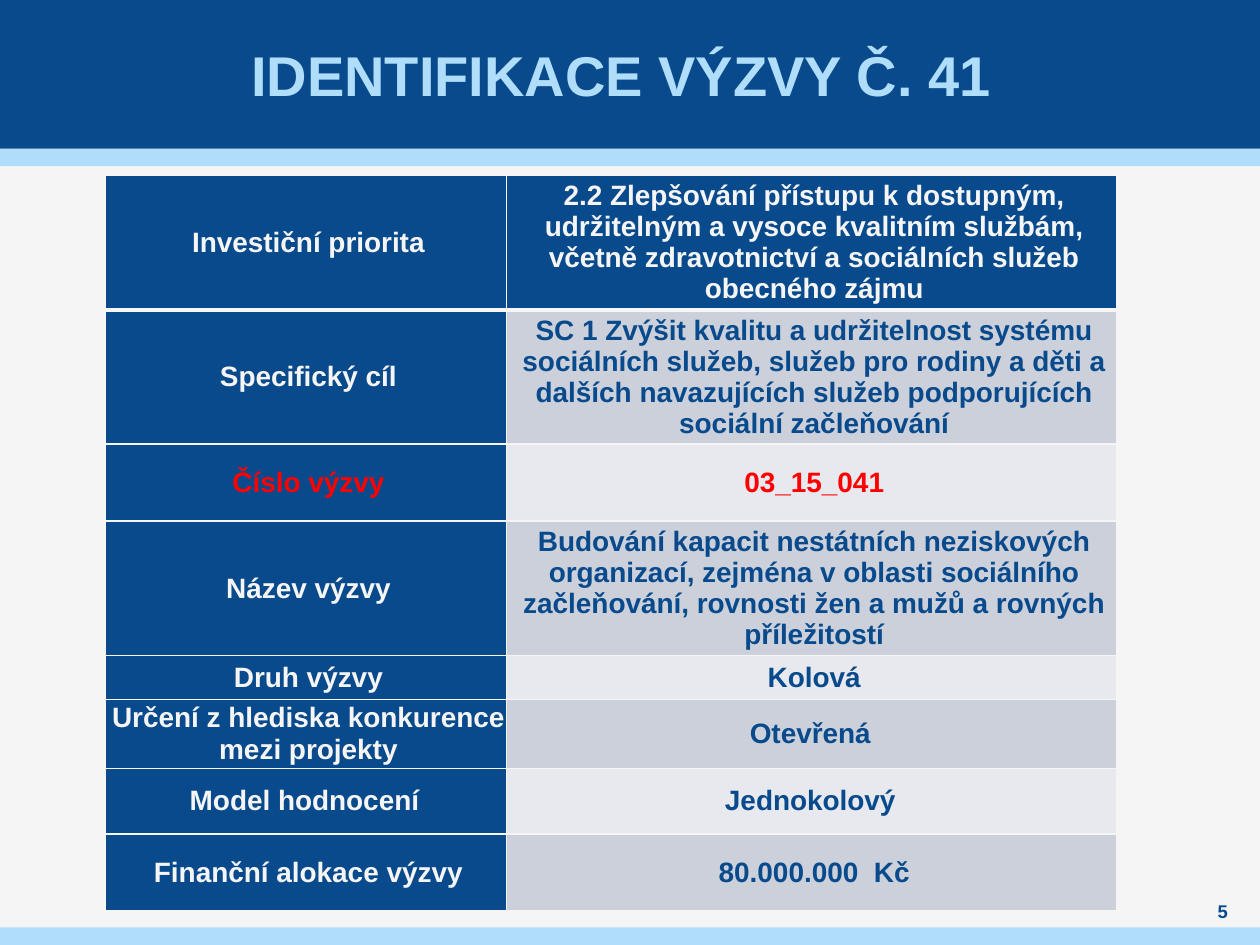
from dataclasses import dataclass

import pptx
import pptx.dml.color
import pptx.enum.shapes
import pptx.enum.text
import pptx.oxml
import pptx.oxml.ns
import pptx.util
from pptx.util import Pt

NAVY, SKY, PALE, RED = "084A8B", "AFDDFA", "F5F5F5", "FF0000"
BANDS = ("E7E9EE", "CCD0DA")
FONT = "Arial"


@dataclass
class Bar:
    top: float
    height: float
    fill: str


@dataclass
class Label:
    text: str
    left: float
    top: float
    width: float
    height: float
    size: float
    color: str
    side_inset: float = 0


@dataclass
class Row:
    name: str
    value: str
    height: float
    highlighted: bool = False


BARS = [Bar(85, 10, SKY), Bar(0, 85, NAVY), Bar(530, 10, SKY)]
LABELS = [
    Label("IDENTIFIKACE VÝZVY Č. 41 ", 28, 0, 663, 85, 32, SKY, 3),
    Label("5", 680.5, 513.5, 36.5, 14.5, 10.5, NAVY),
]
ROWS = [
    Row("Investiční priorita",
        "2.2 Zlepšování přístupu k dostupným, udržitelným a vysoce kvalitním "
        "službám, včetně zdravotnictví a sociálních služeb obecného zájmu", 74),
    Row("Specifický cíl",
        "SC 1 Zvýšit kvalitu a udržitelnost systému sociálních služeb, služeb pro "
        "rodiny a děti a dalších navazujících služeb podporujících sociální "
        "začleňování", 74.5),
    Row("Číslo výzvy", "03_15_041", 44, highlighted=True),
    Row("Název výzvy",
        "Budování kapacit nestátních neziskových organizací, zejména v oblasti "
        "sociálního začleňování, rovnosti žen a mužů a rovných příležitostí", 74.5),
    Row("Druh výzvy", "Kolová", 25),
    Row("Určení z hlediska konkurence mezi projekty", "Otevřená ", 39.5),
    Row("Model hodnocení ", "Jednokolový ", 37.5),
    Row("Finanční alokace výzvy", "80.000.000  Kč", 44),
]
COLUMN_WIDTHS = (229.5, 348.5)


def rgb(value: str) -> pptx.dml.color.RGBColor:
    return pptx.dml.color.RGBColor.from_string(value)


def set_fill(target, color: str) -> None:
    target.fill.solid()
    target.fill.fore_color.rgb = rgb(color)


def format_paragraph(paragraph, size: float, color: str) -> None:
    paragraph.alignment = pptx.enum.text.PP_ALIGN.CENTER
    paragraph.font.name = FONT
    paragraph.font.size = Pt(size)
    paragraph.font.bold = True
    paragraph.font.color.rgb = rgb(color)


def add_bar(slide, bar: Bar) -> None:
    shape = slide.shapes.add_shape(
        pptx.enum.shapes.MSO_SHAPE.RECTANGLE, 0, Pt(bar.top), Pt(720), Pt(bar.height))
    shape.shadow.inherit = False
    set_fill(shape, bar.fill)
    shape.line.fill.background()


def add_label(slide, label: Label) -> None:
    box = slide.shapes.add_textbox(
        Pt(label.left), Pt(label.top), Pt(label.width), Pt(label.height))
    frame = box.text_frame
    frame.word_wrap = True
    frame.vertical_anchor = pptx.enum.text.MSO_ANCHOR.MIDDLE
    frame.margin_left = frame.margin_right = Pt(label.side_inset)
    frame.margin_top = frame.margin_bottom = 0
    frame.text = label.text
    format_paragraph(frame.paragraphs[0], label.size, label.color)


def set_border(cell, side: str, width: float) -> None:
    namespace = pptx.oxml.ns.nsdecls("a")
    cell._tc.get_or_add_tcPr().append(pptx.oxml.parse_xml(
        f'<a:{side} {namespace} w="{int(Pt(width))}"><a:solidFill>'
        f'<a:srgbClr val="{PALE}"/></a:solidFill></a:{side}>'))


def fill_cell(cell, text: str, color: str, fill: str, top: float, bottom: float) -> None:
    cell.margin_left = cell.margin_right = cell.margin_top = cell.margin_bottom = 0
    cell.vertical_anchor = pptx.enum.text.MSO_ANCHOR.MIDDLE
    cell.text = text
    paragraph = cell.text_frame.paragraphs[0]
    paragraph._p.get_or_add_pPr().set("marL", str(int(Pt(3))))
    format_paragraph(paragraph, 16, color)
    # Borders come before the fill in the cell properties
    for side, width in (("lnL", 1), ("lnR", 1), ("lnT", top), ("lnB", bottom)):
        set_border(cell, side, width)
    set_fill(cell, fill)


def add_call_table(slide, rows: list[Row]) -> None:
    table = slide.shapes.add_table(
        len(rows), len(COLUMN_WIDTHS), Pt(60), Pt(100.25),
        Pt(sum(COLUMN_WIDTHS)), Pt(sum(row.height for row in rows))).table
    table.first_row = table.horz_banding = False
    for column, width in zip(table.columns, COLUMN_WIDTHS):
        column.width = Pt(width)
    for index, row in enumerate(rows):
        table.rows[index].height = Pt(row.height)
        is_header = index == 0
        top, bottom = 3 if index == 1 else 1, 3 if is_header else 1
        name_color = RED if row.highlighted else PALE
        value_color = RED if row.highlighted else PALE if is_header else NAVY
        value_fill = NAVY if is_header else BANDS[index % 2]
        fill_cell(table.cell(index, 0), row.name, name_color, NAVY, top, bottom)
        fill_cell(table.cell(index, 1), row.value, value_color, value_fill, top, bottom)


def main() -> None:
    presentation = pptx.Presentation()
    presentation.slide_width, presentation.slide_height = Pt(720), Pt(540)
    slide = presentation.slides.add_slide(presentation.slide_layouts[6])
    set_fill(slide.background, PALE)

    # Header and footer bars
    for bar in BARS:
        add_bar(slide, bar)
    # Title and page number
    for label in LABELS:
        add_label(slide, label)
    # Call details
    add_call_table(slide, ROWS)

    presentation.save("out.pptx")


if __name__ == "__main__":
    main()
